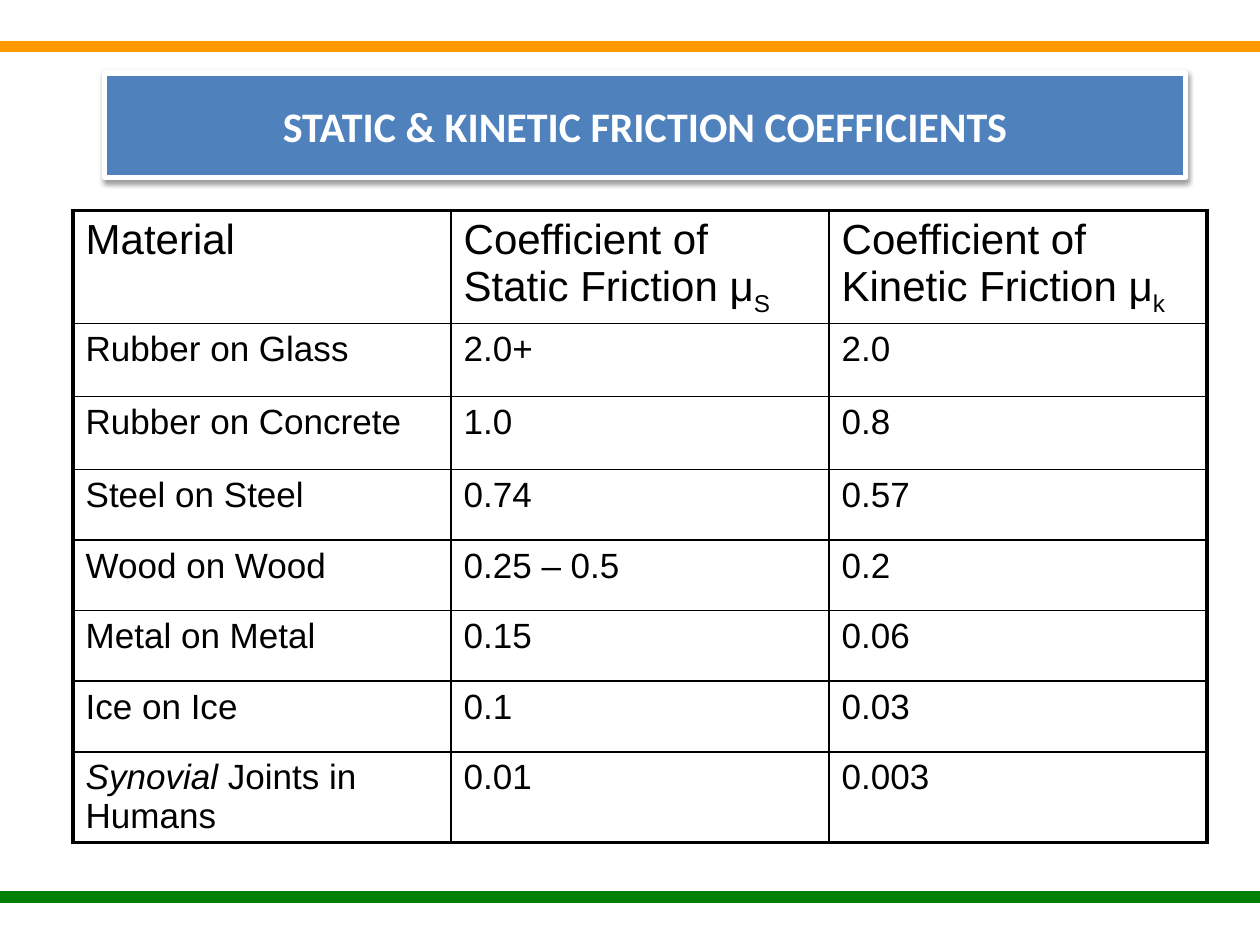
from dataclasses import dataclass
from typing import NamedTuple

from lxml.etree import SubElement
from pptx import Presentation
from pptx.dml.color import RGBColor
from pptx.enum.shapes import MSO_SHAPE
from pptx.enum.text import MSO_ANCHOR, PP_ALIGN
from pptx.oxml.ns import qn
from pptx.util import Emu, Inches, Pt


@dataclass(frozen=True)
class Theme:
    blue: str = "4F81BD"
    green: str = "008000"
    orange: str = "FF9900"
    white: str = "FFFFFF"
    black: str = "000000"
    title_font: str = "Calibri"
    body_font: str = "Arial"
    large: float = 24
    body: float = 20
    outer_rule: float = 2.25
    inner_rule: float = 1


class Box(NamedTuple):
    """A rectangle in shares of the slide's width and height."""
    x: float
    y: float
    w: float
    h: float


class Piece(NamedTuple):
    text: str
    italic: bool = False
    baseline: int = 0


class Bar(NamedTuple):
    y: float
    color: str


THEME = Theme()
WIDTH, HEIGHT = Inches(10), Inches(7.5)
BARS = [Bar(7.08 / 7.5, THEME.green), Bar(0.33 / 7.5, THEME.orange)]
TITLE_BOX = Box(0.083, 0.58 / 7.5, 0.858, 0.83 / 7.5)
TABLE_BOX = Box(0.058, 1.67 / 7.5, 0.9, 4.43 / 7.5)
ROW_HEIGHTS = [0.54] + [0.58] * 2 + [0.56] * 4 + [0.59]
SUBSCRIPT = -25000


def header(symbol: str, kind: str) -> list[Piece]:
    return [Piece(f"Coefficient of {kind} Friction μ"), Piece(symbol, baseline=SUBSCRIPT)]


ROWS = [
    ["Material", header("S", "Static"), header("k", "Kinetic")],
    ["Rubber on Glass", "2.0+", "2.0"],
    ["Rubber on Concrete", "1.0", "0.8"],
    ["Steel on Steel", "0.74", "0.57"],
    ["Wood on Wood", "0.25 – 0.5", "0.2"],
    ["Metal on Metal", "0.15", "0.06"],
    ["Ice on Ice", "0.1", "0.03"],
    [[Piece("Synovial", italic=True), Piece(" Joints in Humans")], "0.01", "0.003"],
]


def place(box: Box) -> tuple[Emu, ...]:
    sizes = (WIDTH, HEIGHT, WIDTH, HEIGHT)
    return tuple(Emu(round(share * size)) for share, size in zip(box, sizes))


def add_run(p, piece: Piece, color: str, **font_format) -> None:
    r = p.add_run()
    r.text = piece.text
    for name, value in font_format.items():
        setattr(r.font, name, value)
    r.font.color.rgb = RGBColor.from_string(color)
    if piece.italic:
        r.font.italic = True
    if piece.baseline:
        r._r.get_or_add_rPr().set("baseline", str(piece.baseline))


def add_rect(slide, box: Box, fill: str, line: str, line_width: float):
    sp = slide.shapes.add_shape(MSO_SHAPE.RECTANGLE, *place(box))
    sp.shadow.inherit = False
    sp.fill.solid()
    sp.fill.fore_color.rgb = RGBColor.from_string(fill)
    sp.line.color.rgb = RGBColor.from_string(line)
    sp.line.width = Pt(line_width)
    return sp


def add_shadow(sp) -> None:
    """Drop a soft shadow straight down."""
    effects = sp._element.spPr.find(qn("a:effectLst"))
    shadow = SubElement(effects, qn("a:outerShdw"), blurRad=str(Pt(3.1)),
                        dist=str(Pt(1.6)), dir="5400000", rotWithShape="0")
    color = SubElement(shadow, qn("a:srgbClr"), val=THEME.black)
    SubElement(color, qn("a:alpha"), val="38000")


def add_title(slide, text: str) -> None:
    sp = add_rect(slide, TITLE_BOX, THEME.blue, THEME.white, 3)
    add_shadow(sp)
    tf = sp.text_frame
    tf.word_wrap = True
    tf.vertical_anchor = MSO_ANCHOR.MIDDLE
    p = tf.paragraphs[0]
    p.alignment = PP_ALIGN.CENTER
    add_run(p, Piece(text), THEME.white, name=THEME.title_font,
            size=Pt(THEME.large), bold=True)


def set_borders(cell, outer: dict[str, bool]) -> None:
    tc_pr = cell._tc.get_or_add_tcPr()
    for side, is_outer in outer.items():
        width = THEME.outer_rule if is_outer else THEME.inner_rule
        ln = SubElement(tc_pr, qn(f"a:ln{side}"), w=str(Pt(width)))
        fill = SubElement(ln, qn("a:solidFill"))
        SubElement(fill, qn("a:srgbClr"), val=THEME.black)


def fill_cell(cell, content: str | list[Piece], size: float) -> None:
    p = cell.text_frame.paragraphs[0]
    space = SubElement(p._p.get_or_add_pPr(), qn("a:spcBef"))
    SubElement(space, qn("a:spcPct"), val="20000")
    pieces = [Piece(content)] if isinstance(content, str) else content
    for piece in pieces:
        add_run(p, piece, THEME.black, name=THEME.body_font, size=Pt(size))


def add_coefficients(slide) -> None:
    last_row, last_col = len(ROWS) - 1, len(ROWS[0]) - 1
    table = slide.shapes.add_table(last_row + 1, last_col + 1, *place(TABLE_BOX)).table
    table.first_row = table.horz_banding = False
    for row, height in zip(table.rows, ROW_HEIGHTS):
        row.height = Inches(height)
    for i, contents in enumerate(ROWS):
        for j, content in enumerate(contents):
            cell = table.cell(i, j)
            set_borders(cell, {"L": j == 0, "R": j == last_col,
                               "T": i == 0, "B": i == last_row})
            cell.fill.background()
            fill_cell(cell, content, THEME.body if i else THEME.large)


def main() -> None:
    prs = Presentation()
    prs.slide_width, prs.slide_height = WIDTH, HEIGHT
    slide = prs.slides.add_slide(prs.slide_layouts[6])
    add_title(slide, "STATIC & KINETIC FRICTION COEFFICIENTS")
    add_coefficients(slide)
    for bar in BARS:
        add_rect(slide, Box(0, bar.y, 1, 0.08 / 7.5), bar.color, bar.color, 0.75)
    prs.save("out.pptx")


if __name__ == "__main__":
    main()
